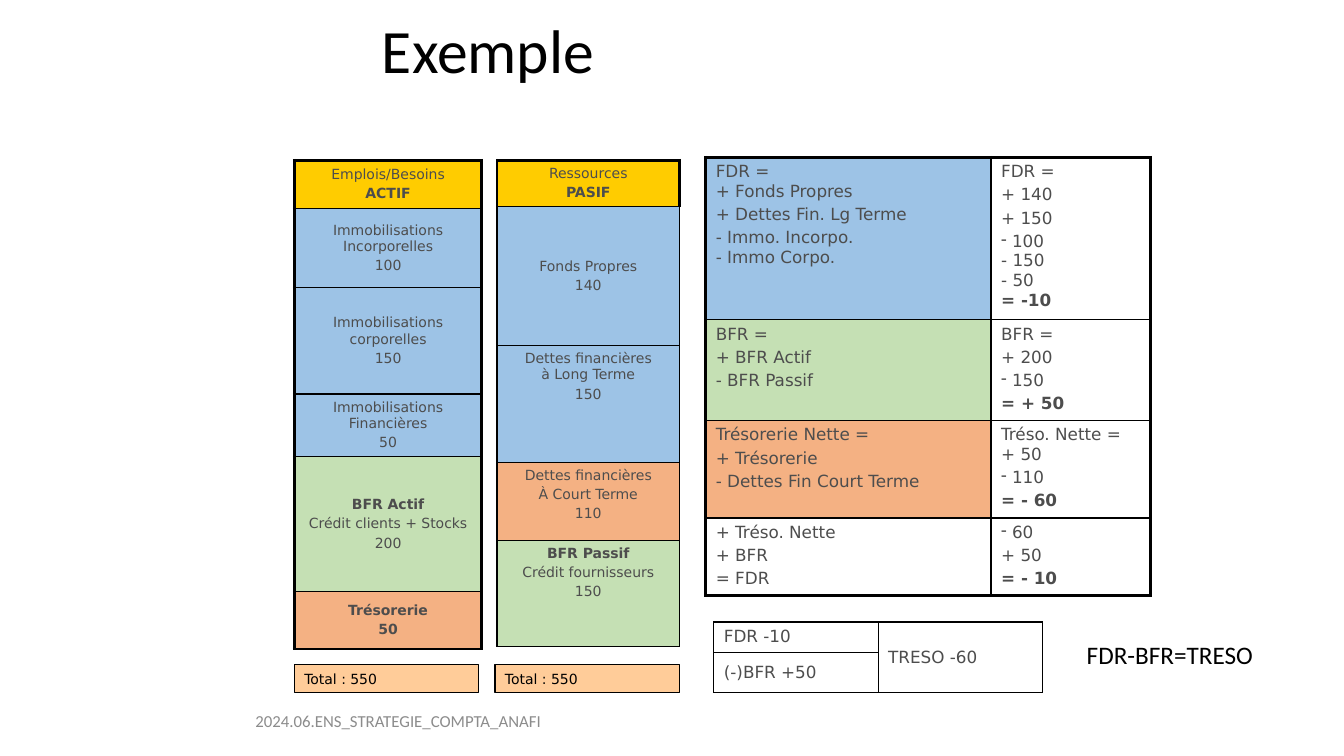
from lxml.etree import SubElement
from pptx import Presentation
from pptx.dml.color import RGBColor
from pptx.enum.shapes import MSO_SHAPE as Shape
from pptx.enum.text import MSO_ANCHOR as Anchor, PP_ALIGN as Align
from pptx.oxml.ns import qn
from pptx.util import Inches, Pt

# Palette and fonts
GOLD, BLUE, GREEN, ORANGE, PEACH = "FFCC00", "9DC3E6", "C5E0B4", "F4B183", "FFCC99"
BLACK, DARK, GREY = "000000", "4D4D4D", "8C8C8C"
SANS, PLAIN = "DejaVu Sans", "Calibri"
TOP, MID = Anchor.TOP, Anchor.MIDDLE
THIN, THICK = 1, 2.25

# Content: a paragraph opening with "*" has a dash bullet, a line opening with "!" is bold
ASSETS = [
    (GOLD, MID, ["Emplois/Besoins", "!ACTIF"]),
    (BLUE, MID, ["Immobilisations Incorporelles", "100"]),
    (BLUE, MID, ["Immobilisations corporelles", "150"]),
    (BLUE, MID, ["Immobilisations Financières", "50"]),
    (GREEN, MID, ["!BFR Actif", "Crédit clients + Stocks", "200"]),
    (ORANGE, MID, ["!Trésorerie", "!50"]),
]
DEBTS = [
    (GOLD, MID, ["Ressources", "!PASIF"]),
    (BLUE, MID, ["Fonds Propres", "140"]),
    (BLUE, TOP, ["Dettes financières\nà Long Terme", "150"]),
    (ORANGE, TOP, ["Dettes financières", "À Court Terme", "110"]),
    (GREEN, TOP, ["!BFR Passif", "Crédit fournisseurs", "150"]),
]
RATIOS = [
    (BLUE, ["FDR =\n+ Fonds Propres", "+ Dettes Fin. Lg Terme",
            "- Immo. Incorpo.\n- Immo Corpo."],
     ["FDR =", "+ 140", "+ 150", "* 100\n- 150\n- 50\n!= -10"]),
    (GREEN, ["BFR =", "+ BFR Actif", "- BFR Passif"],
     ["BFR =", "+ 200", "* 150", "!= + 50"]),
    (ORANGE, ["Trésorerie Nette =", "+ Trésorerie", "- Dettes Fin Court Terme"],
     ["Tréso. Nette =\n+ 50", "* 110", "!= - 60"]),
    (None, ["+ Tréso. Nette", "+ BFR", "= FDR"],
     ["* 60", "+ 50", "!= - 10"]),
]

# Layout, in percent of the slide's width and height
ASSET_ROWS = [6.4, 10.4, 14.13, 8.27, 17.87, 7.6]
DEBT_ROWS = [6.13, 18.4, 15.47, 10.27, 14]
RATIO_COLS, RATIO_ROWS = [21.23, 11.85], [21.47, 13.33, 12.93, 10.27]
SUM_COLS, SUM_ROWS = [12.23, 12.23], [4, 5.33]
TOTALS = [(21.9, 87.87, 13.73, 3.73), (36.83, 87.87, 13.73, 3.73)]
LABELS = [
    ("Exemple", (27.68, 0.53, 60, 13.2), 44, BLACK, MID, Align.LEFT),
    ("FDR-BFR=TRESO", (80.12, 83.87, 15, 5.33), 18, BLACK, TOP, Align.LEFT),
    ("2024.06.ENS_STRATEGIE_COMPTA_ANAFI", (12.75, 92.67, 33.76, 5.33), 12, GREY, MID,
     Align.CENTER),
]

deck = Presentation()
deck.slide_width, deck.slide_height = Inches(13.33), Inches(7.5)
slide = deck.slides.add_slide(deck.slide_layouts[6])


def color(code):
    return RGBColor.from_string(code)


def across(share):
    return int(deck.slide_width * share / 100)


def down(share):
    return int(deck.slide_height * share / 100)


def place(box):
    left, top, width, height = box
    return across(left), down(top), across(width), down(height)


def write(frame, lines, size, font, ink, align):
    """Fill a text frame, one paragraph for each item."""
    frame.word_wrap = True
    for i, line in enumerate(lines):
        para = frame.add_paragraph() if i else frame.paragraphs[0]
        para.text = line.removeprefix("*")
        para.alignment = align
        if i:
            para.space_before = Pt(size * 0.2)
        if line.startswith("*"):
            props = para._p.get_or_add_pPr()
            props.set("marL", "0")
            props.set("indent", "0")
            SubElement(props, qn("a:buChar")).set("char", "-")
        for run in para.runs:
            run.font.bold = run.text.startswith("!")
            run.text = run.text.removeprefix("!")
            run.font.size, run.font.name = Pt(size), font
            run.font.color.rgb = color(ink)
        for gap in para._p.findall(qn("a:br")):
            SubElement(gap, qn("a:rPr")).set("sz", str(size * 100))


def edge(cell, widths):
    """Draw the left, right, top and bottom borders, ahead of the fill."""
    props = cell._tc.get_or_add_tcPr()
    for i, (side, width) in enumerate(zip("LRTB", widths)):
        line = SubElement(props, qn(f"a:ln{side}"))
        line.set("w", str(Pt(width)))
        fill = SubElement(line, qn("a:solidFill"))
        SubElement(fill, qn("a:srgbClr")).set("val", BLACK)
        props.insert(i, line)


def grid(left, top, cols, rows, cells, size, align, rule):
    """Build a table; rule gives the border widths for a row number."""
    box = place((left, top, sum(cols), sum(rows)))
    table = slide.shapes.add_table(len(rows), len(cols), *box).table
    table.first_row = table.horz_banding = False
    for col, width in zip(table.columns, cols):
        col.width = across(width)
    for r, height in enumerate(rows):
        table.rows[r].height = down(height)
        for c, (fill, anchor, lines) in enumerate(cells[r]):
            cell = table.cell(r, c)
            if fill:
                cell.fill.solid()
                cell.fill.fore_color.rgb = color(fill)
            else:
                cell.fill.background()
            cell.vertical_anchor = anchor
            write(cell.text_frame, lines, size, SANS, DARK, align)
            edge(cell, rule(r))
    return table


def framed(count):
    """Thick outer frame, thin lines between rows."""
    return lambda r: (THICK, THICK, THIN if r else THICK, THICK if r == count - 1 else THIN)


def capped(r):
    """Thin lines with a heavier header."""
    return (THIN,) * 4 if r else (THIN, THICK, THICK, THIN)


# Balance sheet: uses and resources
grid(21.9, 21.2, [13.95], ASSET_ROWS, [[row] for row in ASSETS], 10, Align.CENTER,
     framed(len(ASSETS)))
grid(36.98, 21.2, [13.58], DEBT_ROWS, [[row] for row in DEBTS], 10, Align.CENTER, capped)

# Ratios
pairs = [[(fill, TOP, terms), (None, TOP, values)] for fill, terms, values in RATIOS]
grid(52.51, 20.8, RATIO_COLS, RATIO_ROWS, pairs, 12, Align.LEFT, framed(len(RATIOS)))

# Summary with a merged result
recap = [[(None, MID, ["FDR -10"]), (None, MID, ["TRESO -60"])],
         [(None, MID, ["(-)BFR +50"]), (None, MID, [""])]]
table = grid(53.11, 82.27, SUM_COLS, SUM_ROWS, recap, 12, Align.LEFT, lambda r: (THIN,) * 4)
table.cell(0, 1).merge(table.cell(1, 1))

# Totals
for box in TOTALS:
    total = slide.shapes.add_shape(Shape.RECTANGLE, *place(box))
    total.shadow.inherit = False
    total.fill.solid()
    total.fill.fore_color.rgb = color(PEACH)
    total.line.color.rgb = color(BLACK)
    total.line.width = Pt(0.75)
    total.text_frame.vertical_anchor = MID
    write(total.text_frame, ["Total : 550"], 10, SANS, BLACK, Align.LEFT)

# Title, formula and footer
for text, box, size, ink, anchor, align in LABELS:
    frame = slide.shapes.add_textbox(*place(box)).text_frame
    frame.vertical_anchor = anchor
    write(frame, [text], size, PLAIN, ink, align)
    if size == 44:
        frame.paragraphs[0].line_spacing = 0.9

deck.save("out.pptx")
